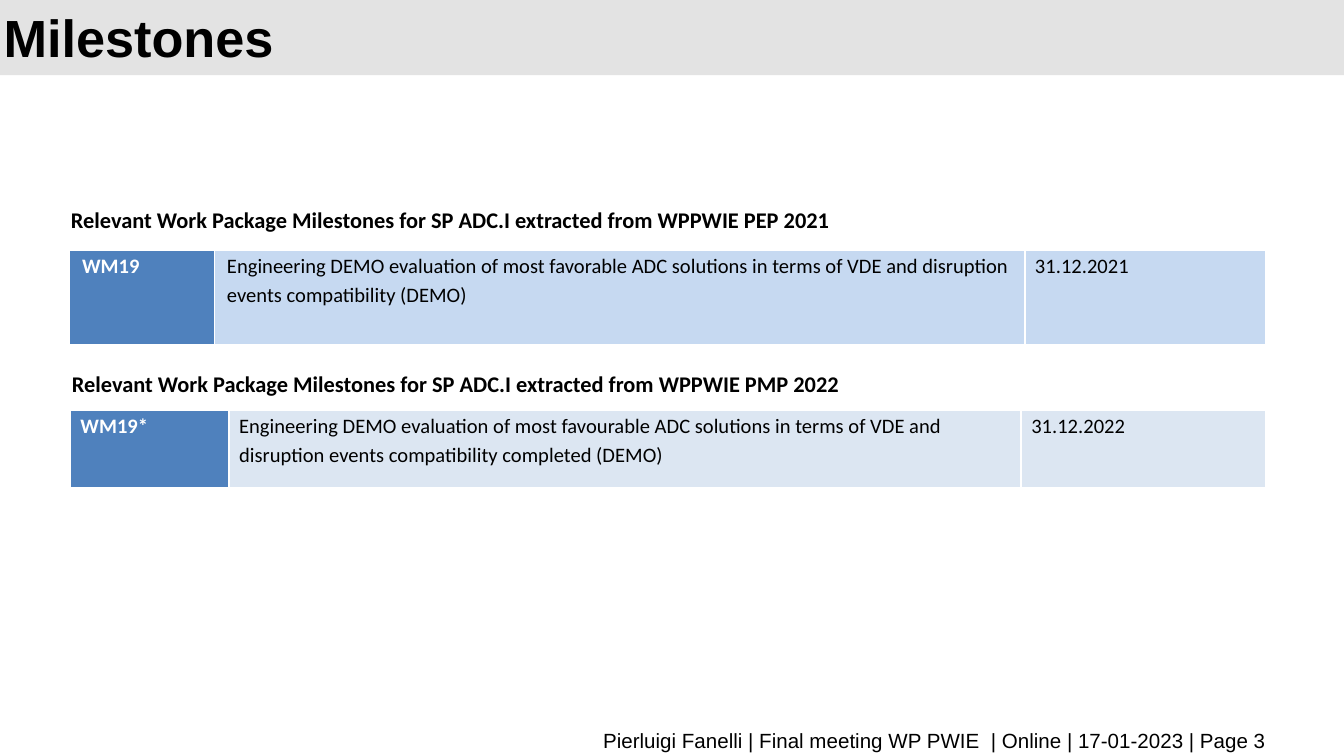
from dataclasses import dataclass

from lxml.etree import SubElement
from pptx import Presentation
from pptx.dml.color import RGBColor
from pptx.enum.shapes import MSO_SHAPE
from pptx.enum.text import MSO_ANCHOR, PP_ALIGN
from pptx.oxml.ns import qn
from pptx.util import Cm, Pt


@dataclass(frozen=True)
class Theme:
    """Colours, fonts and type sizes of the slide."""
    black: str = "000000"
    white: str = "FFFFFF"
    band: str = "E3E3E3"
    code_fill: str = "4F81BD"
    fill_2021: str = "C6D9F1"
    fill_2022: str = "DCE6F2"
    page_font: str = "Arial"
    body_font: str = "Calibri"
    title_size: int = 28
    heading_size: int = 12
    body_size: int = 11


@dataclass(frozen=True)
class Box:
    """A region of the slide, in centimetres."""
    left: float
    top: float
    width: float
    height: float

    def lengths(self):
        """Return the position and size as lengths."""
        return Cm(self.left), Cm(self.top), Cm(self.width), Cm(self.height)


THEME = Theme()


def write(paragraph, text, size, font, color=THEME.black, bold=False):
    """Add one styled run to a paragraph."""
    run = paragraph.add_run()
    run.text = text
    run.font.size = Pt(size)
    run.font.name = font
    run.font.bold = bold
    run.font.color.rgb = RGBColor.from_string(color)


def add_label(slide, box, wrap=True):
    """Add an empty text box and return its text frame."""
    frame = slide.shapes.add_textbox(*box.lengths()).text_frame
    frame.word_wrap = wrap
    return frame


def add_title(slide, box, title):
    """Draw the title band across the box with the title in it."""
    band = slide.shapes.add_shape(MSO_SHAPE.RECTANGLE, *box.lengths())
    band.shadow.inherit = False
    band.fill.solid()
    band.fill.fore_color.rgb = RGBColor.from_string(THEME.band)
    band.line.fill.background()
    frame = add_label(slide, Box(box.left - 0.18, box.top + 0.23, 20.96, 0.97))
    frame.vertical_anchor = MSO_ANCHOR.MIDDLE
    paragraph = frame.paragraphs[0]
    paragraph.line_spacing = Pt(32)
    write(paragraph, title, THEME.title_size, THEME.page_font, bold=True)


def add_borders(cell):
    """Give a cell thin white sides and a thicker white base."""
    properties = cell._tc.get_or_add_tcPr()
    for side, width in (("L", 1), ("R", 1), ("T", 1), ("B", 3)):
        line = SubElement(properties, qn(f"a:ln{side}"), w=str(Pt(width)))
        fill = SubElement(line, qn("a:solidFill"))
        SubElement(fill, qn("a:srgbClr"), val=THEME.white)


def fill_cell(cell, text, fill, color, bold, indent):
    """Style one milestone cell and write its text."""
    add_borders(cell)
    cell.fill.solid()
    cell.fill.fore_color.rgb = RGBColor.from_string(fill)
    cell.margin_left = cell.margin_right = Cm(0.19)
    cell.margin_top = cell.margin_bottom = 0
    paragraph = cell.text_frame.paragraphs[0]
    paragraph._p.get_or_add_pPr().set("marL", str(Cm(indent)))
    paragraph.line_spacing = 1.15
    paragraph.space_after = Pt(3)
    write(paragraph, text, THEME.body_size, THEME.body_font, color, bold)


def add_milestone(slide, box, heading, milestone, widths, row_height, fill, indents):
    """Place a heading at the top of the box and its milestone row at the foot."""
    frame = add_label(slide, Box(box.left - 0.22, box.top, 15.1, 0.76), wrap=False)
    write(frame.paragraphs[0], heading, THEME.heading_size, THEME.body_font, bold=True)

    row_box = Box(box.left, box.top + box.height - row_height, box.width, row_height)
    table = slide.shapes.add_table(1, len(widths), *row_box.lengths()).table
    table.first_row = table.horz_banding = False
    for column, width in zip(table.columns, widths):
        column.width = Cm(width)
    for index, (cell, text) in enumerate(zip(table.rows[0].cells, milestone)):
        is_code = index == 0
        fill_cell(cell, text, THEME.code_fill if is_code else fill,
                  THEME.white if is_code else THEME.black, is_code, indents[index])


def add_footer(slide, box, text):
    """Write the right-aligned page line in the box."""
    paragraph = add_label(slide, box).paragraphs[0]
    paragraph.alignment = PP_ALIGN.RIGHT
    write(paragraph, text, THEME.body_size, THEME.page_font)


def main():
    """Build and save the milestones slide."""
    deck = Presentation()
    deck.slide_width, deck.slide_height = Cm(25.4), Cm(14.29)
    slide = deck.slides.add_slide(deck.slide_layouts[6])

    add_title(slide, Box(0, 0, 25.4, 1.42), "Milestones")
    add_milestone(
        slide, Box(1.31, 3.78, 22.61, 2.77),
        "Relevant Work Package Milestones for SP ADC.I extracted from WPPWIE PEP 2021",
        ("WM19",
         "Engineering DEMO evaluation of most favorable ADC solutions in terms of "
         "VDE and disruption events compatibility (DEMO)",
         "31.12.2021"),
        (2.74, 15.32, 4.55), 1.83, THEME.fill_2021, (0.05, 0.05, 0))
    add_milestone(
        slide, Box(1.33, 6.88, 22.59, 2.38),
        "Relevant Work Package Milestones for SP ADC.I extracted from WPPWIE PMP 2022",
        ("WM19*",
         "Engineering DEMO evaluation of most favourable ADC solutions in terms of "
         "VDE and disruption events compatibility completed (DEMO)",
         "31.12.2022"),
        (3, 14.97, 4.62), 1.51, THEME.fill_2022, (0, 0, 0))
    add_footer(slide, Box(1.3, 13.64, 22.89, 0.56),
               "Pierluigi Fanelli | Final meeting WP PWIE  | Online | 17-01-2023 | Page 3")
    deck.save("out.pptx")


if __name__ == "__main__":
    main()
